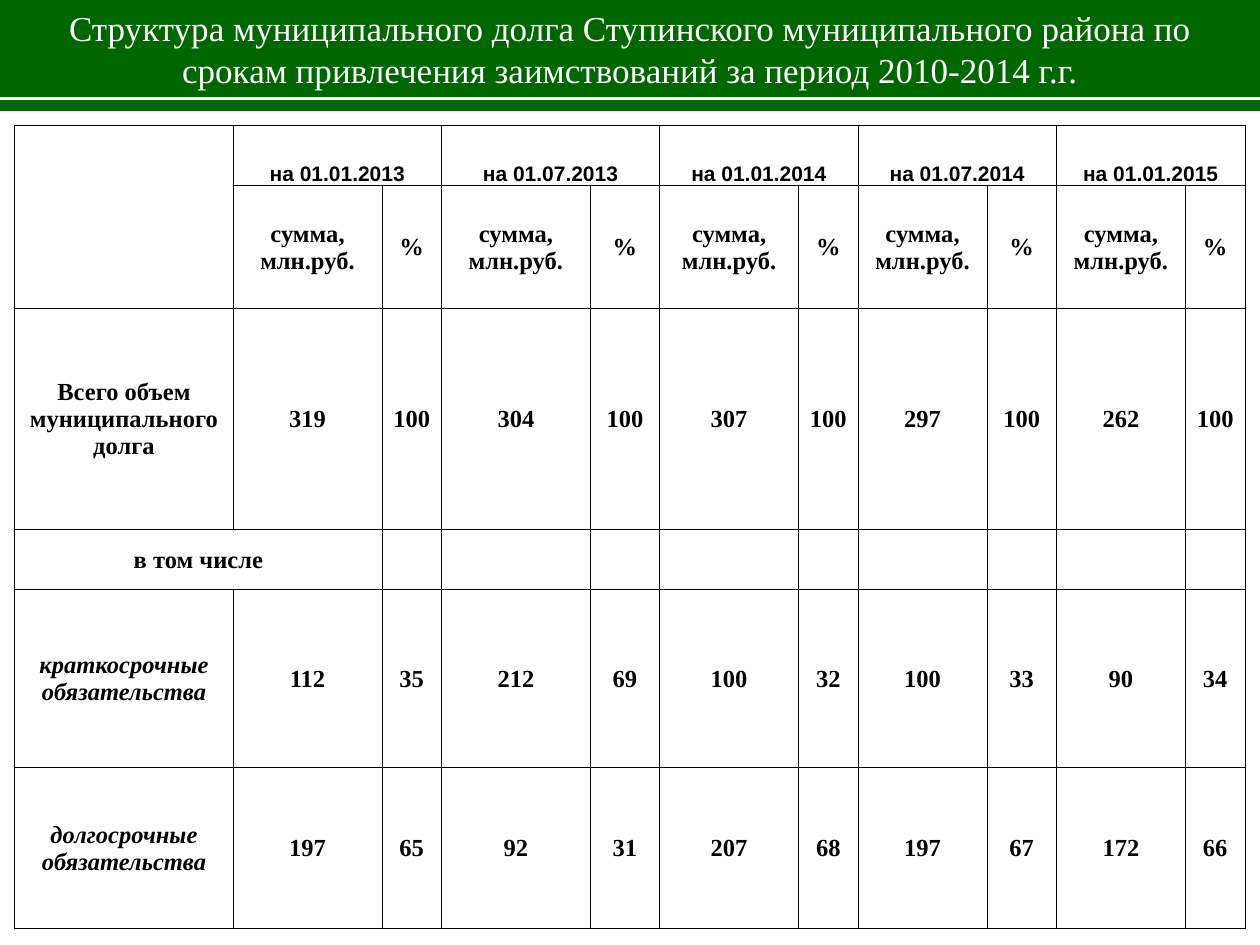
from lxml import etree
from pptx import Presentation
from pptx.dml.color import RGBColor
from pptx.enum.shapes import MSO_CONNECTOR, MSO_SHAPE
from pptx.enum.text import MSO_ANCHOR, PP_ALIGN
from pptx.oxml.ns import qn
from pptx.util import Cm, Pt

RECT = MSO_SHAPE.RECTANGLE
LINE = MSO_CONNECTOR.STRAIGHT
MIDDLE, BOTTOM = MSO_ANCHOR.MIDDLE, MSO_ANCHOR.BOTTOM
CENTER = PP_ALIGN.CENTER
SERIF, SANS = "Times New Roman", "Arial"
COLORS = {"green": "006600", "white": "FFFFFF", "black": "000000"}

TITLE = ("Структура муниципального долга Ступинского муниципального района по "
         "срокам привлечения заимствований за период 2010-2014 г.г.")
DATES = ["01.01.2013", "01.07.2013", "01.01.2014", "01.07.2014", "01.01.2015"]
DEBT = [
    ("Всего объем муниципального долга", [319, 100, 304, 100, 307, 100, 297, 100, 262, 100]),
    ("в том числе", []),
    ("краткосрочные обязательства", [112, 35, 212, 69, 100, 32, 100, 33, 90, 34]),
    ("долгосрочные обязательства", [197, 65, 92, 31, 207, 68, 197, 67, 172, 66]),
]
WIDTHS = [4.4, 3, 1.2, 3, 1.4, 2.8, 1.2, 2.6, 1.4, 2.6, 1.2]
HEIGHTS = [1.22, 2.48, 4.45, 1.22, 3.58, 3.25]


def paint(name):
    """Return the named colour."""
    return RGBColor.from_string(COLORS[name])


def write(frame, text, size, font=SERIF, color="black", bold=False, italic=False):
    """Write one centred run into a text frame."""
    para = frame.paragraphs[0]
    para.alignment = CENTER
    run = para.add_run()
    run.text = text
    run.font.name, run.font.size = font, Pt(size)
    run.font.bold, run.font.italic = bold, italic
    run.font.color.rgb = paint(color)


def frame_cell(cell):
    """Give a cell thin black borders and no fill."""
    props = cell._tc.get_or_add_tcPr()
    for side in ("lnL", "lnR", "lnT", "lnB"):
        edge = etree.SubElement(props, qn(f"a:{side}"), w=str(Pt(0.5)))
        fill = etree.SubElement(edge, qn("a:solidFill"))
        etree.SubElement(fill, qn("a:srgbClr"), val=COLORS["black"])
    cell.fill.background()


def fill_cell(cell, text, size=14, font=SERIF, anchor=MIDDLE, italic=False):
    """Set a cell's margins and its bold text."""
    cell.margin_left = cell.margin_right = cell.margin_top = Cm(0.02)
    cell.margin_bottom = 0
    cell.vertical_anchor = anchor
    write(cell.text_frame, text, size, font, bold=True, italic=italic)


def add_header(slide, left, top, width, height):
    """Draw the title band and the rule below it."""
    band = slide.shapes.add_shape(RECT, Cm(left), Cm(top), Cm(width), Cm(height))
    band.shadow.inherit = False
    band.fill.solid()
    band.fill.fore_color.rgb = paint("green")
    band.line.fill.background()
    band.text_frame.word_wrap = True
    write(band.text_frame, TITLE, 20, color="white")
    level = Cm(top + height + 0.17)
    rule = slide.shapes.add_connector(LINE, Cm(left), level, Cm(left + width), level)
    rule.line.color.rgb = paint("green")
    rule.line.width = Pt(6)
    etree.SubElement(rule._element.spPr, qn("a:effectLst"))


def add_debt(slide, left, top, width, height):
    """Draw the debt table scaled to its box."""
    shape = slide.shapes.add_table(len(HEIGHTS), len(WIDTHS), Cm(left), Cm(top),
                                   Cm(width), Cm(height))
    table = shape.table
    table.first_row = table.horz_banding = False
    for col, part in zip(table.columns, WIDTHS):
        col.width = Cm(width * part / sum(WIDTHS))
    for row, part in zip(table.rows, HEIGHTS):
        row.height = Cm(height * part / sum(HEIGHTS))
    for cell in table.iter_cells():
        frame_cell(cell)

    table.cell(0, 0).merge(table.cell(1, 0))
    for i, date in enumerate(DATES):
        col = 1 + 2 * i
        table.cell(0, col).merge(table.cell(0, col + 1))
        fill_cell(table.cell(0, col), f"на {date}", 12, SANS, BOTTOM)
        fill_cell(table.cell(1, col), "сумма, млн.руб.")
        fill_cell(table.cell(1, col + 1), "%")

    table.cell(3, 0).merge(table.cell(3, 1))
    for row, (label, values) in enumerate(DEBT, 2):
        fill_cell(table.cell(row, 0), label, italic=row > 3)
        for col, value in enumerate(values, 1):
            fill_cell(table.cell(row, col), str(value))


def main():
    """Build and save the slide."""
    deck = Presentation()
    deck.slide_width, deck.slide_height = Cm(25.4), Cm(19.05)
    slide = deck.slides.add_slide(deck.slide_layouts[6])
    add_header(slide, 0, 0, 25.4, 1.96)
    add_debt(slide, 0.3, 2.52, 24.8, 16.2)
    deck.save("out.pptx")


if __name__ == "__main__":
    main()
